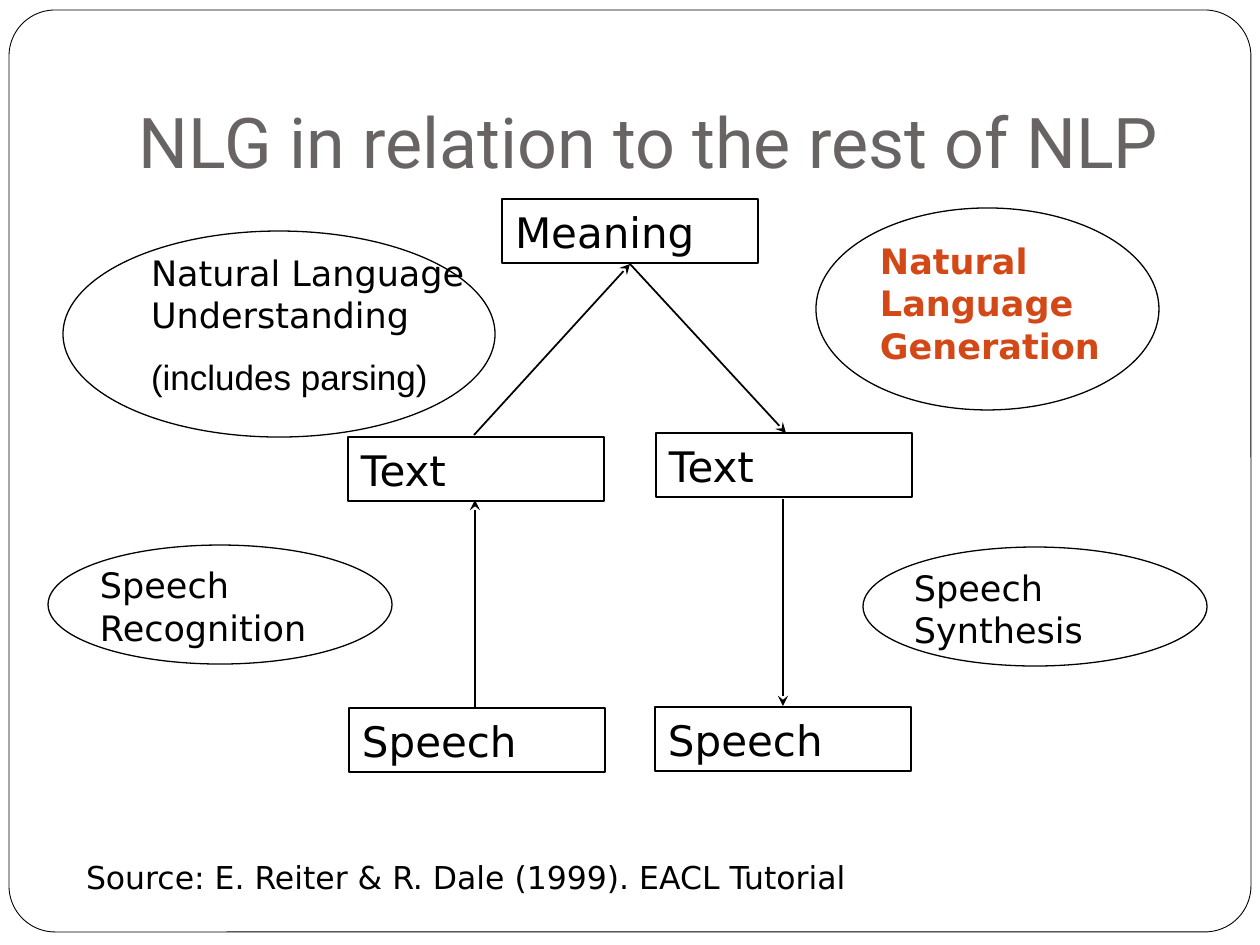
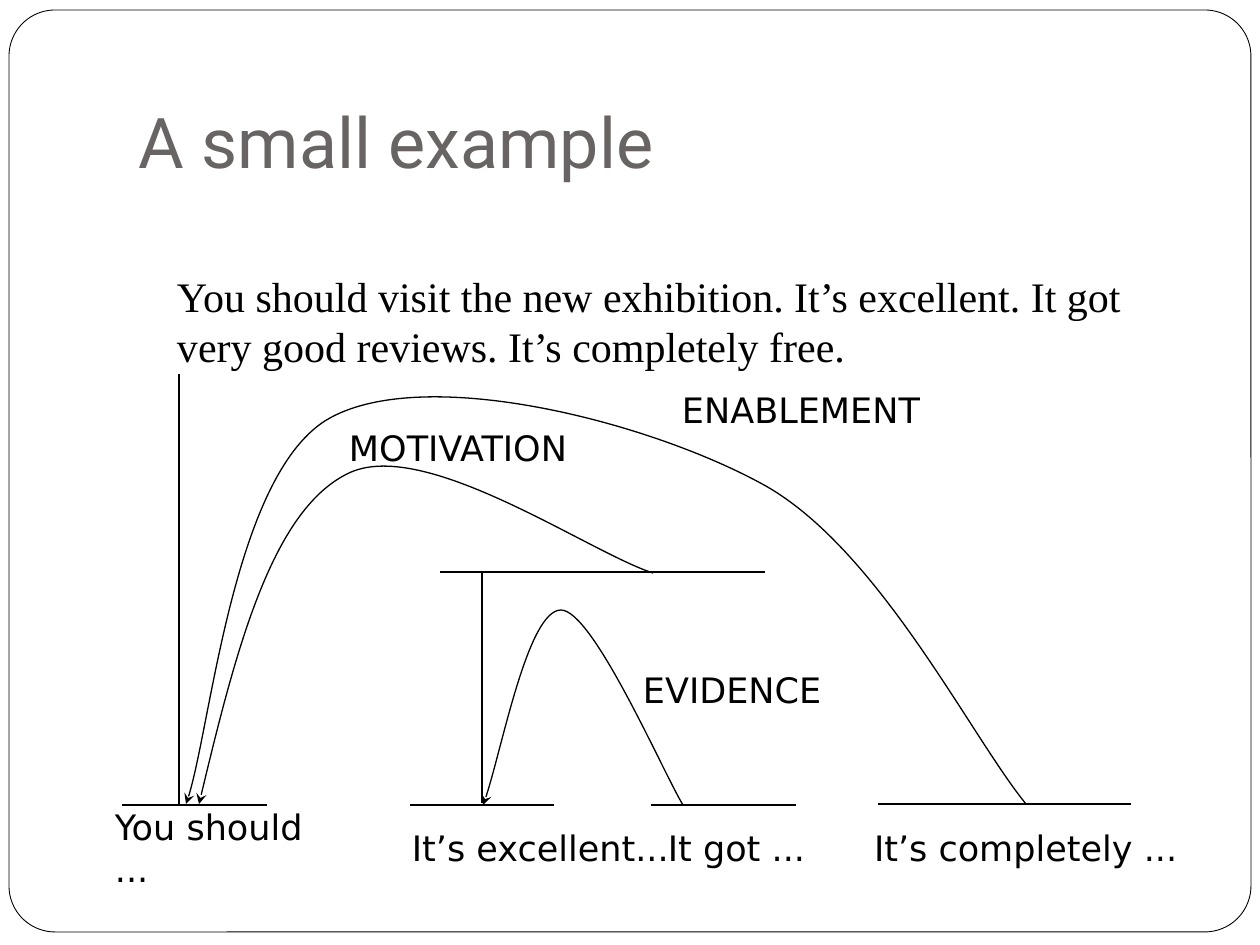
import pptx
import pptx.util
import pptx.dml.color
import pptx.enum.shapes
import pptx.enum.text
import pptx.oxml
import pptx.oxml.ns

PX = 914400 / 126
COLORS = {"ink": "000000", "paper": "FFFFFF", "title": "696464", "accent": "D34817"}
SANS = "DejaVu Sans"
SHAPE = pptx.enum.shapes.MSO_SHAPE
ANCHOR = pptx.enum.text.MSO_ANCHOR
qn = pptx.oxml.ns.qn


def px(n):
    return pptx.util.Emu(round(n * PX))


def rgb(name):
    return pptx.dml.color.RGBColor.from_string(COLORS[name])


def add_run(p, text, size, font=SANS, color="ink", bold=False):
    r = p.add_run()
    r.text = text
    r.font.size = pptx.util.Pt(size)
    r.font.name = font
    r.font.bold = bold
    r.font.color.rgb = rgb(color)


def set_frame(tf, top=8, bottom=6, anchor=ANCHOR.TOP):
    tf.word_wrap = True
    tf.auto_size = pptx.enum.text.MSO_AUTO_SIZE.NONE
    tf.vertical_anchor = anchor
    tf.margin_left = tf.margin_right = px(13)
    tf.margin_top, tf.margin_bottom = px(top), px(bottom)
    p = tf.paragraphs[0]
    p.alignment = pptx.enum.text.PP_ALIGN.LEFT
    return p


def place(sp, x, y, w, h):
    sp.left, sp.top, sp.width, sp.height = map(px, (x, y, w, h))


def set_line(sp, width=0.75, arrow=False):
    sp.line.color.rgb = rgb("ink")
    sp.line.width = pptx.util.Pt(width)
    if arrow:
        ln = sp._element.spPr.find(qn("a:ln"))
        pptx.oxml.ns
        ln.append(pptx.oxml.parse_xml(
            f'<a:tailEnd {pptx.oxml.ns.nsdecls("a")} type="stealth"/>'))


def add_outline(shapes, kind, x, y, w, h, width=0.75):
    sp = shapes.add_shape(kind, *map(px, (x, y, w, h)))
    sp.shadow.inherit = False
    sp.fill.background()
    set_line(sp, width)
    return sp


def add_line(s, x1, y1, x2, y2, width=0.75, arrow=False):
    cx = s.shapes.add_connector(
        pptx.enum.shapes.MSO_CONNECTOR.STRAIGHT, *map(px, (x1, y1, x2, y2)))
    set_line(cx, width, arrow)
    cx._element.spPr.append(pptx.oxml.parse_xml(
        f'<a:effectLst {pptx.oxml.ns.nsdecls("a")}/>'))


def add_curve(s, start, *points):
    fb = s.shapes.build_freeform(*start, scale=PX)
    fb.add_line_segments(points, close=False)
    sp = fb.convert_to_shape()
    sp.shadow.inherit = False
    sp.fill.background()
    set_line(sp, arrow=True)
    path_el = next(sp._element.iter(qn("a:path")))
    segments = path_el.findall(qn("a:lnTo"))
    for i in range(0, len(segments), 3):
        curve = path_el.makeelement(qn("a:cubicBezTo"), {})
        segments[i].addprevious(curve)
        for seg in segments[i:i + 3]:
            curve.append(seg[0])
            path_el.remove(seg)


def add_text(shapes, text, x, y, w, h, size=20, anchor=ANCHOR.TOP, **style):
    tf = shapes.add_textbox(*map(px, (x, y, w, h))).text_frame
    margin = 6 if anchor == ANCHOR.MIDDLE else 8
    add_run(set_frame(tf, margin, anchor=anchor), text, size, **style)
    return tf


def add_box(s, text, x, y):
    sp = add_outline(s.shapes, SHAPE.RECTANGLE, x, y, 256, 64)
    add_run(set_frame(sp.text_frame), text, 24)


def add_bubble(s, text, oval, area, **style):
    group = s.shapes.add_group_shape()
    add_outline(group.shapes, SHAPE.OVAL, *oval)
    return add_text(group.shapes, text, *area, **style)


def add_slide(prs, layout, title):
    s = prs.slides.add_slide(prs.slide_layouts[layout])
    sp = s.shapes.title
    place(sp, 126, 38, 1071, 158)
    p = set_frame(sp.text_frame, 6, 13, ANCHOR.BOTTOM)
    add_run(p, title, 40, "Roboto", "title")
    return s


def move_frame_to_master(prs, s):
    sp = add_outline(s.shapes, SHAPE.ROUNDED_RECTANGLE, 9, 10, 1242, 922, 0.5)
    sp.adjustments[0] = 0.05
    sp.fill.solid()
    sp.fill.fore_color.rgb = rgb("paper")
    sp._element.nvSpPr.cNvPr.set("id", "99")
    prs.slide_master.shapes._spTree.insert(2, sp._element)


def build_relation(prs):
    s = add_slide(prs, 5, "NLG in relation to the rest of NLP")
    move_frame_to_master(prs, s)
    for text, x, y in [("Meaning", 502, 199), ("Text", 348, 437), ("Text", 656, 433),
                       ("Speech", 349, 708), ("Speech", 655, 707)]:
        add_box(s, text, x, y)

    add_line(s, 474, 435, 630, 264, 1, True)
    add_line(s, 630, 264, 786, 433, 1, True)
    add_line(s, 475, 707, 475, 500, arrow=True)
    add_line(s, 783, 499, 783, 706, arrow=True)

    tf = add_bubble(s, "Natural Language Understanding",
                    (63, 231, 432, 206), (138, 244, 408, 249))
    p = tf.add_paragraph()
    p.space_before = pptx.util.Pt(11)
    add_run(p, "(includes parsing)", 20, "Arial")
    add_bubble(s, "Natural Language Generation",
               (816, 208, 343, 202), (867, 232, 330, 140), color="accent", bold=True)
    add_bubble(s, "Speech Recognition", (48, 545, 344, 119), (87, 556, 267, 97))
    add_bubble(s, "Speech Synthesis", (863, 547, 344, 119), (901, 558, 267, 97))
    add_text(s.shapes, "Source: E. Reiter & R. Dale (1999). EACL Tutorial",
             73, 850, 815, 50, 18)


def build_example(prs):
    s = add_slide(prs, 1, "A small example")
    body = s.placeholders[1]
    place(body, 126, 264, 1071, 115)
    p = set_frame(body.text_frame, 6)
    p.space_before = pptx.util.Pt(0)
    pPr = p._p.get_or_add_pPr()
    pPr.set("marL", str(px(38)))
    pPr.set("indent", "0")
    pPr.append(pptx.oxml.parse_xml(f'<a:buNone {pptx.oxml.ns.nsdecls("a")}/>'))
    add_run(p, "You should visit the new exhibition. It’s excellent. It got very good "
               "reviews. It’s completely free.", 24, "Times New Roman")

    for left, right, y in [(122, 267, 805), (410, 554, 805), (651, 796, 805),
                           (878, 1131, 804), (440, 765, 572)]:
        add_line(s, left, y, right, y)
    for x, top, bottom in [(179, 374, 804), (482, 571, 803)]:
        add_line(s, x, top, x, bottom)

    add_curve(s, (683, 805), (663, 772), (593, 610), (561, 610),
              (528, 610), (499, 765), (483, 805))
    add_curve(s, (653, 573), (588, 552), (422, 435), (347, 474),
              (271, 512), (234, 658), (199, 804))
    add_curve(s, (1026, 804), (971, 737), (879, 549), (764, 485),
              (648, 421), (426, 365), (330, 418),
              (234, 471), (210, 740), (186, 804))

    for text, x, y, w in [("You should ...", 102, 820, 220),
                          ("It’s excellent...", 399, 820, 290),
                          ("It got ...", 655, 820, 175),
                          ("It’s completely ...", 861, 820, 336),
                          ("MOTIVATION", 336, 420, 260),
                          ("EVIDENCE", 630, 662, 212),
                          ("ENABLEMENT", 669, 382, 271)]:
        add_text(s.shapes, text, x, y, w, 54, anchor=ANCHOR.MIDDLE)


def main():
    prs = pptx.Presentation()
    prs.slide_width, prs.slide_height = px(1260), px(945)
    build_relation(prs)
    build_example(prs)
    prs.save("out.pptx")


if __name__ == "__main__":
    main()
